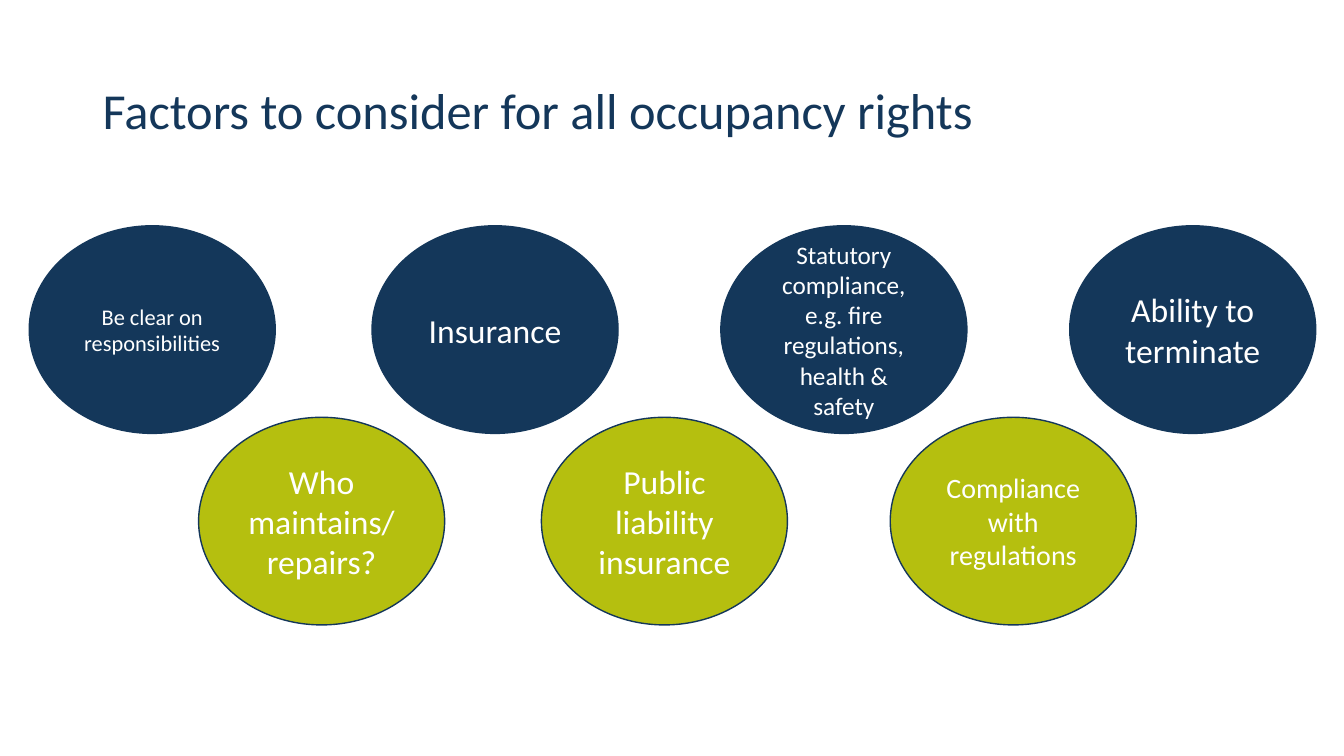
from pptx import Presentation
from pptx import util as u
from pptx.dml.color import RGBColor
from pptx.enum import shapes, text

PX = 9144
HUES = {"navy": "14375A", "lime": "B5BF0F", "white": "FFFFFF"}
WIDE, HIGH = 244, 206
LEFTS = (29, 369, 715, 1061)
SHIFT = 168
ROWS = ((224, "navy"), (414, "lime"))
FACTORS = (
    ("Be clear on responsibilities", 16),
    ("Who maintains/repairs?", 24),
    ("Insurance", 24),
    ("Public liability insurance", 24),
    ("Statutory compliance, e.g. fire regulations, health & safety", 18),
    ("Compliance with regulations", 20),
    ("Ability to terminate", 24),
)


def px(*sizes):
    return [u.Emu(size * PX) for size in sizes]


def hue(name):
    return RGBColor.from_string(HUES[name])


def style(item, values):
    for key, value in values.items():
        setattr(item, key, value)


def write(shape, words, size, tint, layout):
    frame = shape.text_frame
    style(frame, {"word_wrap": True, "vertical_anchor": text.MSO_ANCHOR.MIDDLE})
    para = frame.paragraphs[0]
    style(para, layout)
    run = para.add_run()
    run.text = words
    style(run.font, {"name": "Calibri", "size": u.Pt(size)})
    run.font.color.rgb = hue(tint)


def add_title(slide, words):
    box = slide.shapes.add_textbox(*px(92, 40, 1150, 145))
    write(box, words, 36, "navy", {"line_spacing": 0.9})


def add_oval(slide, left, top, fill, words, size):
    oval = slide.shapes.add_shape(
        shapes.MSO_SHAPE.OVAL, *px(left, top, WIDE, HIGH))
    oval.shadow.inherit = False
    oval.fill.solid()
    oval.fill.fore_color.rgb = hue(fill)
    oval.line.color.rgb = hue("navy")
    oval.line.width = u.Pt(1)
    write(oval, words, size, "white", {"alignment": text.PP_ALIGN.CENTER})


def main():
    deck = Presentation()
    deck.slide_width, deck.slide_height = px(1333, 750)
    slide = deck.slides.add_slide(deck.slide_layouts[6])
    add_title(slide, "Factors to consider for all occupancy rights")
    for index, (words, size) in enumerate(FACTORS):
        pair, row = divmod(index, 2)
        top, fill = ROWS[row]
        add_oval(slide, LEFTS[pair] + row * SHIFT, top, fill, words, size)
    deck.save("out.pptx")


if __name__ == "__main__":
    main()
